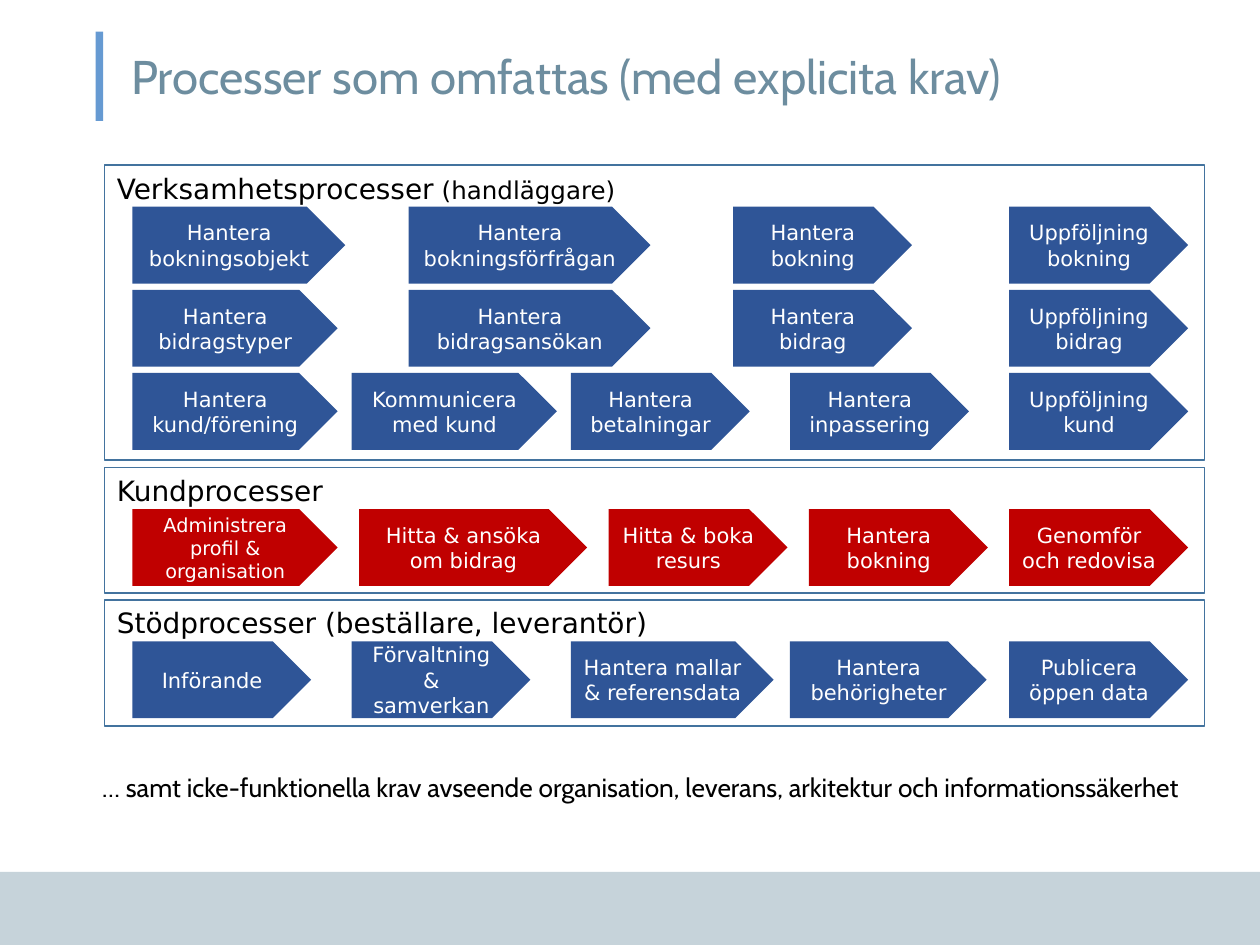
from pptx import Presentation
from pptx.dml.color import RGBColor
from pptx.enum.shapes import MSO_SHAPE
from pptx.enum.text import MSO_ANCHOR, MSO_AUTO_SIZE, PP_ALIGN
from pptx.util import Inches, Pt

RECTANGLE, ARROW = MSO_SHAPE.RECTANGLE, MSO_SHAPE.PENTAGON
TOP, MIDDLE = MSO_ANCHOR.TOP, MSO_ANCHOR.MIDDLE
LEFT, CENTER = PP_ALIGN.LEFT, PP_ALIGN.CENTER
NO_FIT = MSO_AUTO_SIZE.NONE
TITLE_ONLY = 5

BLACK = RGBColor(0x00, 0x00, 0x00)
WHITE = RGBColor(0xFF, 0xFF, 0xFF)
TITLE_COLOR = RGBColor(0x6D, 0x8D, 0x9F)
FOOTER_COLOR = RGBColor(0xC6, 0xD3, 0xDA)
ACCENT = RGBColor(0x66, 0x9A, 0xD2)
FRAME = RGBColor(0x43, 0x73, 0x9E)
BLUE = RGBColor(0x2F, 0x55, 0x97)
RED = RGBColor(0xC0, 0x00, 0x00)

HEADING_FONT, PROCESS_FONT = "Cabin", "DejaVu Sans"

PANEL_LEFT, PANEL_WIDTH = 0.83, 8.73
GRID_LEFT, COLUMN, LAST_COLUMN = 1.05, 1.74, 4
ROW = 0.66
ARROW_HEIGHT = 0.61
FIRST_ROW_OFFSET = 0.33
SHORT, MEDIUM, LONG = 1.42, 1.63, 1.92

OUTER_COLUMNS = (0, 1.26, 2.74, 4)
EVEN_COLUMNS = (0, 1, 2, 3, 4)

BUSINESS_ROWS = [
    (OUTER_COLUMNS, [("Hantera\nbokningsobjekt", 1.69), ("Hantera\nbokningsförfrågan", LONG),
                     ("Hantera\nbokning", SHORT), ("Uppföljning\nbokning", SHORT)]),
    (OUTER_COLUMNS, [("Hantera\nbidragstyper", MEDIUM), ("Hantera\nbidragsansökan", LONG),
                     ("Hantera\nbidrag", SHORT), ("Uppföljning\nbidrag", SHORT)]),
    (EVEN_COLUMNS, [("Hantera\nkund/förening", MEDIUM), ("Kommunicera\nmed kund", MEDIUM),
                    ("Hantera\nbetalningar", SHORT), ("Hantera\ninpassering", SHORT),
                    ("Uppföljning kund", SHORT)]),
]
CUSTOMER_PROCESSES = [("Administrera profil & organisation", MEDIUM),
                      ("Hitta & ansöka\nom bidrag", 1.81), ("Hitta & boka resurs", SHORT),
                      ("Hantera bokning", SHORT), ("Genomför och redovisa", SHORT)]
SUPPORT_PROCESSES = [("Införande", SHORT), ("Förvaltning\n& samverkan", SHORT),
                     ("Hantera mallar & referensdata", 1.61),
                     ("Hantera\nbehörigheter", 1.56), ("Publicera öppen data", SHORT)]


def equal_gap_columns(processes):
    widths = [width for _, width in processes[:-1]]
    gap = (LAST_COLUMN * COLUMN - sum(widths)) / len(widths)
    return [(sum(widths[:i]) + i * gap) / COLUMN for i in range(len(processes))]


def style_text(frame, font_name, size, color, align):
    for paragraph in frame.paragraphs:
        paragraph.alignment = align
        for run in paragraph.runs:
            run.font.name = font_name
            run.font.size = Pt(size)
            run.font.color.rgb = color


def add_box(slide, preset, left, top, width, height, fill=None):
    box = slide.shapes.add_shape(preset, Inches(left), Inches(top), Inches(width), Inches(height))
    box.shadow.inherit = False
    if fill is None:
        box.fill.background()
        box.line.color.rgb = FRAME
        box.line.width = Pt(1)
    else:
        box.fill.solid()
        box.fill.fore_color.rgb = fill
        box.line.fill.background()
    return box


def add_panel(slide, top, height, heading, suffix=""):
    frame = add_box(slide, RECTANGLE, PANEL_LEFT, top, PANEL_WIDTH, height).text_frame
    frame.vertical_anchor = TOP
    frame.text = heading
    if suffix:
        frame.paragraphs[0].add_run().text = suffix
    style_text(frame, PROCESS_FONT, 16, BLACK, LEFT)
    if suffix:
        frame.paragraphs[0].runs[-1].font.size = Pt(14)


def add_process_row(slide, top, columns, processes, fill):
    for column, (label, width) in zip(columns, processes):
        left = GRID_LEFT + column * COLUMN
        frame = add_box(slide, ARROW, left, top, width, ARROW_HEIGHT, fill).text_frame
        frame.vertical_anchor = MIDDLE
        frame.text = label
        size = 11 if label.startswith("Administrera") else 12
        style_text(frame, PROCESS_FONT, size, WHITE, CENTER)


def add_title(slide, text):
    title = slide.shapes.title
    title.left, title.top = Inches(0.78), Inches(0.18)
    title.width, title.height = Inches(8.45), Inches(0.84)
    frame = title.text_frame
    frame.text = text
    frame.auto_size = NO_FIT
    frame.vertical_anchor = MIDDLE
    frame.margin_left, frame.margin_right = Inches(0.26), Inches(0.1)
    frame.margin_top = frame.margin_bottom = Inches(0.04)
    style_text(frame, HEADING_FONT, 27, TITLE_COLOR, LEFT)


def add_closing_note(slide, text):
    note = slide.shapes.add_textbox(Inches(0.68), Inches(6.07), Inches(8.81), Inches(0.35))
    note.text_frame.word_wrap = False
    note.text_frame.text = text
    style_text(note.text_frame, HEADING_FONT, 15, BLACK, CENTER)


def main():
    deck = Presentation()
    deck.slide_width, deck.slide_height = Inches(10), Inches(7.5)
    slide = deck.slides.add_slide(deck.slide_layouts[TITLE_ONLY])

    add_box(slide, RECTANGLE, 0, 6.92, 10, 0.58, FOOTER_COLOR)
    add_box(slide, RECTANGLE, 0.76, 0.25, 0.06, 0.71, ACCENT)
    add_title(slide, "Processer som omfattas (med explicita krav)")
    add_closing_note(slide, "… samt icke-funktionella krav avseende organisation, "
                            "leverans, arkitektur och informationssäkerhet")

    business_top, customer_top, support_top = 1.31, 3.71, 4.76
    add_panel(slide, business_top, 2.34, "Verksamhetsprocesser", " (handläggare)")
    for index, (columns, processes) in enumerate(BUSINESS_ROWS):
        top = business_top + FIRST_ROW_OFFSET + index * ROW
        add_process_row(slide, top, columns, processes, BLUE)

    add_panel(slide, customer_top, 1, "Kundprocesser")
    add_process_row(slide, customer_top + FIRST_ROW_OFFSET,
                    equal_gap_columns(CUSTOMER_PROCESSES), CUSTOMER_PROCESSES, RED)

    add_panel(slide, support_top, 1, "Stödprocesser (beställare, leverantör)")
    add_process_row(slide, support_top + FIRST_ROW_OFFSET, EVEN_COLUMNS, SUPPORT_PROCESSES, BLUE)

    deck.save("out.pptx")


if __name__ == "__main__":
    main()
